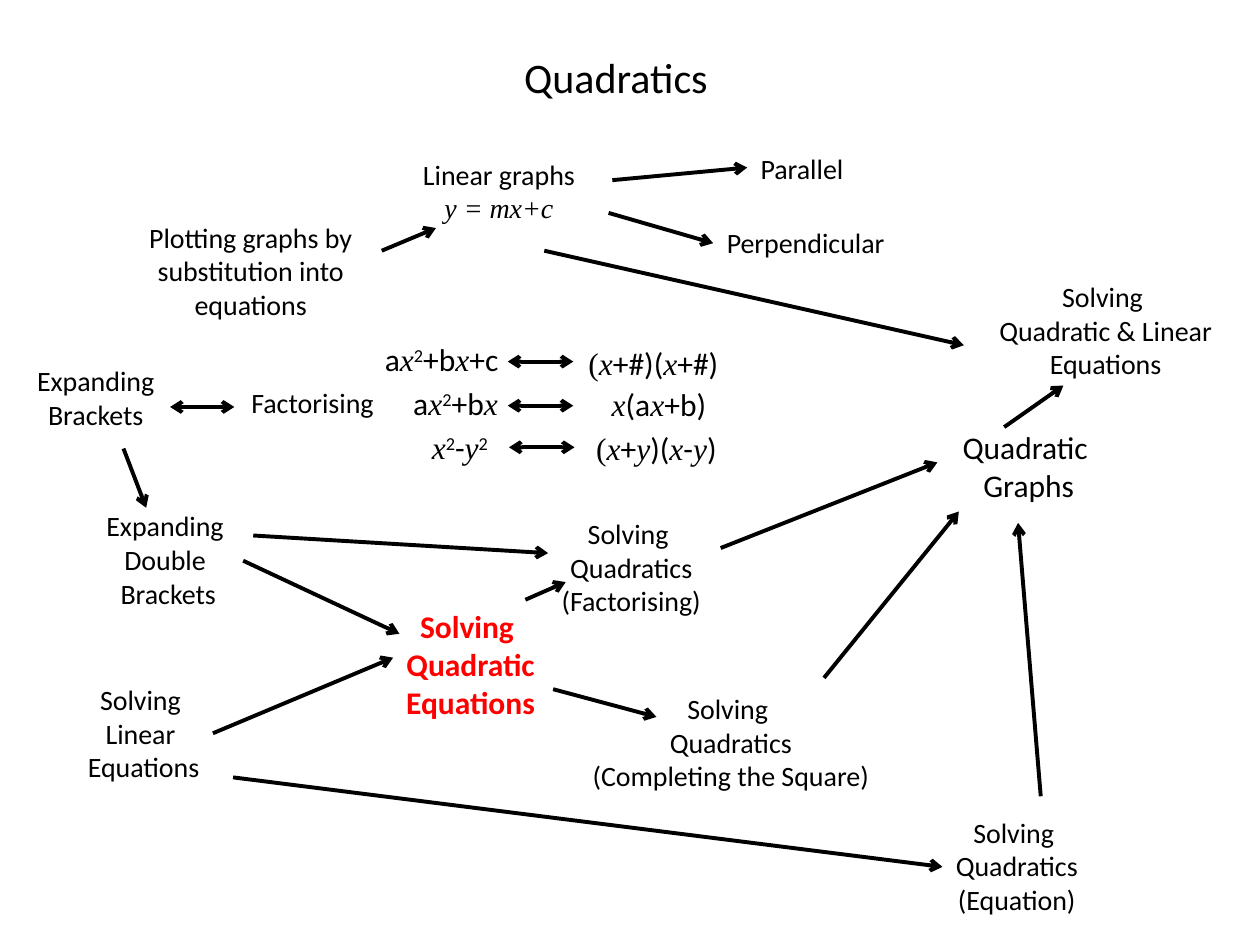
from itertools import groupby

from lxml import etree
from pptx import Presentation
from pptx.dml.color import RGBColor
from pptx.enum.shapes import MSO_CONNECTOR
from pptx.enum.text import MSO_ANCHOR, MSO_AUTO_SIZE, PP_ALIGN
from pptx.oxml.ns import qn
from pptx.util import Inches, Pt

STRAIGHT = MSO_CONNECTOR.STRAIGHT
TOP = MSO_ANCHOR.TOP
FIT = MSO_AUTO_SIZE.SHAPE_TO_FIT_TEXT
LEFT, CENTER = PP_ALIGN.LEFT, PP_ALIGN.CENTER


class Theme:
    sans, serif = "Calibri", "Times New Roman"
    ink, accent = RGBColor(0, 0, 0), RGBColor(0xFF, 0, 0)
    title, large, body = Pt(24), Pt(18), Pt(16)
    line = Pt(2.25)


def set_text(sp, box, lines, size, color=Theme.ink, align=CENTER, bold=False):
    """Place a text shape and fill it with one paragraph per line."""
    sp.left, sp.top, sp.width, sp.height = [Inches(v) for v in box]
    tf = sp.text_frame
    tf.text = "\n".join(lines)
    tf.word_wrap = False
    tf.auto_size = FIT
    tf.vertical_anchor = TOP
    for p in tf.paragraphs:
        p.alignment = align
        p.font.size = size
        for r in p.runs:
            r.font.name, r.font.size = Theme.sans, size
            r.font.bold, r.font.color.rgb = bold, color
    return tf


def add_arrow(x1, y1, x2, y2, ends=("tailEnd",)):
    c = s.shapes.add_connector(STRAIGHT, Inches(x1), Inches(y1), Inches(x2), Inches(y2))
    c.line.color.rgb = Theme.ink
    c.line.width = Theme.line
    ln = c.line._get_or_add_ln()
    for end in ends:
        etree.SubElement(ln, qn("a:" + end), type="arrow")
    etree.SubElement(c._element.spPr, qn("a:effectLst"))


prs = Presentation()
prs.slide_width, prs.slide_height = Inches(10), Inches(7.5)
s = prs.slides.add_slide(prs.slide_layouts[5])

# Title
set_text(s.shapes.title, (4.06, 0.36, 1.68, 0.5), ["Quadratics"], Theme.title, align=LEFT)

# Topics
topics = [
    ((0.19, 2.84, 1.14, 0.64), ["Expanding", "Brackets"]),
    ((1.89, 3.01, 1.18, 0.37), ["Factorising"]),
    ((0.74, 3.99, 1.19, 0.91), ["Expanding ", "Double ", "Brackets"]),
    ((0.59, 5.37, 1.1, 0.91), ["Solving ", "Linear ", "Equations"]),
    ((1.07, 1.7, 1.84, 0.91), ["Plotting graphs by", " substitution into ", "equations"]),
    ((4.35, 4.05, 1.32, 0.91), ["Solving ", "Quadratics", "(Factorising)"]),
    ((7.48, 6.42, 1.18, 0.91), ["Solving ", "Quadratics", "(Equation)"]),
    ((4.59, 5.44, 2.42, 0.91), ["Solving ", "Quadratics", "(Completing the Square)"]),
    ((5.93, 1.15, 0.87, 0.37), ["Parallel"]),
    ((5.66, 1.74, 1.47, 0.37), ["Perpendicular"]),
    ((7.82, 2.17, 1.91, 0.91), ["Solving ", "Quadratic & Linear", "Equations"]),
]
for box, lines in topics:
    set_text(s.shapes.add_textbox(0, 0, 0, 0), box, lines, Theme.body)

# Larger topics, with the central one in the accent colour
set_text(s.shapes.add_textbox(0, 0, 0, 0), (7.53, 3.35, 1.27, 0.71),
         ["Quadratic ", "Graphs"], Theme.large)
set_text(s.shapes.add_textbox(0, 0, 0, 0), (3.12, 4.77, 1.23, 1.01),
         ["Solving ", "Quadratic", "Equations"], Theme.large, Theme.accent, bold=True)

# Linear graphs, with its equation in italics
tf = set_text(s.shapes.add_textbox(0, 0, 0, 0), (3.25, 1.2, 1.42, 0.64),
              ["Linear graphs", "y = mx+c"], Theme.body)
equation = tf.paragraphs[1].runs[0].font
equation.name, equation.italic = Theme.serif, True

# Links between topics
links = [
    (0.98, 3.56, 1.16, 4.03), (1.93, 4.45, 3.17, 5.03), (1.69, 5.82, 3.12, 5.22),
    (3.03, 1.99, 3.46, 1.81), (4.86, 1.43, 5.93, 1.33), (4.83, 1.69, 5.66, 1.93),
    (4.17, 4.76, 4.49, 4.62), (2.01, 4.25, 4.35, 4.39), (1.85, 6.17, 7.48, 6.88),
    (5.72, 4.35, 7.44, 3.67), (4.39, 5.47, 5.21, 5.69), (6.54, 5.38, 7.61, 4.06),
    (8.26, 6.32, 8.08, 4.15), (4.32, 1.99, 7.65, 2.74), (7.97, 3.39, 8.44, 3.06),
]
for link in links:
    add_arrow(*link)

# Two-way links: expanding/factorising, then the three formula pairs
for x, y, width in [(1.35, 3.23, 0.51), (4.03, 2.87, 0.52), (4.03, 3.22, 0.52), (4.04, 3.55, 0.52)]:
    add_arrow(x, y, x + width, y, ("headEnd", "tailEnd"))

# Formulas: x and y are serif italics, digits are superscripts
formulas = [
    ((2.94, 2.65, 1.13, 0.4), "ax2+bx+c"),
    ((3.17, 3, 0.89, 0.4), "ax2+bx"),
    ((3.31, 3.35, 0.68, 0.4), "x2-y2"),
    ((4.56, 2.68, 1.25, 0.4), "(x+#)(x+#)"),
    ((4.75, 3.01, 0.96, 0.4), "x(ax+b)"),
    ((4.61, 3.36, 1.2, 0.4), "(x+y)(x-y)"),
]
for box, formula in formulas:
    tf = set_text(s.shapes.add_textbox(0, 0, 0, 0), box, [], Theme.large)
    p = tf.paragraphs[0]
    for (variable, power), chars in groupby(formula, lambda ch: (ch in "xy", ch.isdigit())):
        r = p.add_run()
        r.text = "".join(chars)
        opening = r.text == "("and len(p.runs) == 1
        r.font.name = Theme.serif if variable or opening else Theme.sans
        r.font.size, r.font.italic = Theme.large, variable
        r.font.color.rgb = Theme.ink
        if power:
            r.font._element.set("baseline", "30000")

prs.save("out.pptx")
